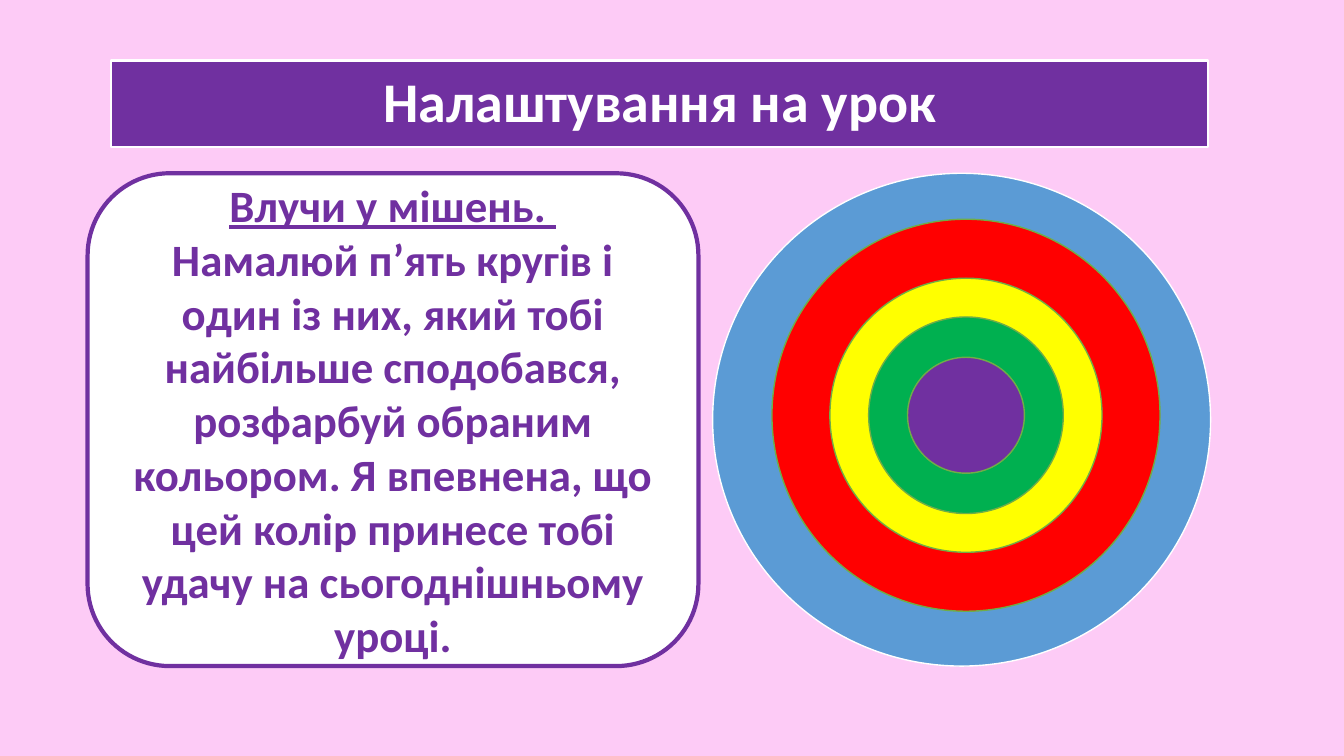
from pptx import Presentation
from pptx.dml.color import RGBColor
from pptx.enum.shapes import MSO_SHAPE
from pptx.enum.text import MSO_ANCHOR, PP_ALIGN
from pptx.util import Pt

COLORS = {
    "pink": "FDCBF6",
    "purple": "7030A0",
    "white": "FFFFFF",
    "blue": "5B9BD5",
    "red": "FF0000",
    "yellow": "FFFF00",
    "green": "00B050",
    "olive": "70AD47",
}
TITLE = "Налаштування на урок"
HEAD = "Влучи у мішень. "
TASK = (
    "Намалюй п’ять кругів і один із них, який тобі найбільше сподобався, "
    "розфарбуй обраним кольором. Я впевнена, що цей колір принесе тобі "
    "удачу на сьогоднішньому уроці."
)
CENTER = (690, 296.6)
RINGS = [
    ("red", 277.2, 280),
    ("yellow", 194.4, 195.8),
    ("green", 139, 140.4),
    ("purple", 83.5, 82.8),
]


def color(name):
    return RGBColor.from_string(COLORS[name])


def add_shape(slide, kind, box, fill, line, width):
    shape = slide.shapes.add_shape(kind, *(Pt(n) for n in box))
    shape.shadow.inherit = False
    shape.fill.solid()
    shape.fill.fore_color.rgb = color(fill)
    shape.line.color.rgb = color(line)
    shape.line.width = Pt(width)
    return shape


def add_disc(slide, center, size, fill, line):
    (x, y), (w, h) = center, size
    box = (x - w / 2, y - h / 2, w, h)
    add_shape(slide, MSO_SHAPE.OVAL, box, fill, line, 1)


def write(para, text, size=32, ink="purple", under=False, space=None):
    para.alignment = PP_ALIGN.CENTER
    para.line_spacing = space
    run = para.add_run()
    run.text = text
    font = run.font
    font.name = "Calibri"
    font.size = Pt(size)
    font.bold = True
    font.underline = under
    font.color.rgb = color(ink)


def add_panel(slide, kind, box, fill, line, width):
    """Add a shape for text and return its text frame."""
    frame = add_shape(slide, kind, box, fill, line, width).text_frame
    frame.word_wrap = True
    frame.vertical_anchor = MSO_ANCHOR.MIDDLE
    return frame


def main():
    deck = Presentation()
    deck.slide_width, deck.slide_height = Pt(960), Pt(540)
    slide = deck.slides.add_slide(deck.slide_layouts[6])
    slide.background.fill.solid()
    slide.background.fill.fore_color.rgb = color("pink")

    title = add_panel(slide, MSO_SHAPE.RECTANGLE, (79.2, 43.2, 784, 62),
                      "purple", "white", 1.5)
    write(title.paragraphs[0], TITLE, size=40, ink="white", space=0.9)

    task = add_panel(slide, MSO_SHAPE.ROUNDED_RECTANGLE,
                     (62.6, 123.8, 436.3, 352), "white", "purple", 3)
    write(task.paragraphs[0], HEAD, under=True)
    write(task.add_paragraph(), TASK)

    add_disc(slide, (686.9, 299.8), (355.7, 352), "blue", "white")
    for fill, w, h in RINGS:
        add_disc(slide, CENTER, (w, h), fill, "olive")

    deck.save("out.pptx")


if __name__ == "__main__":
    main()
